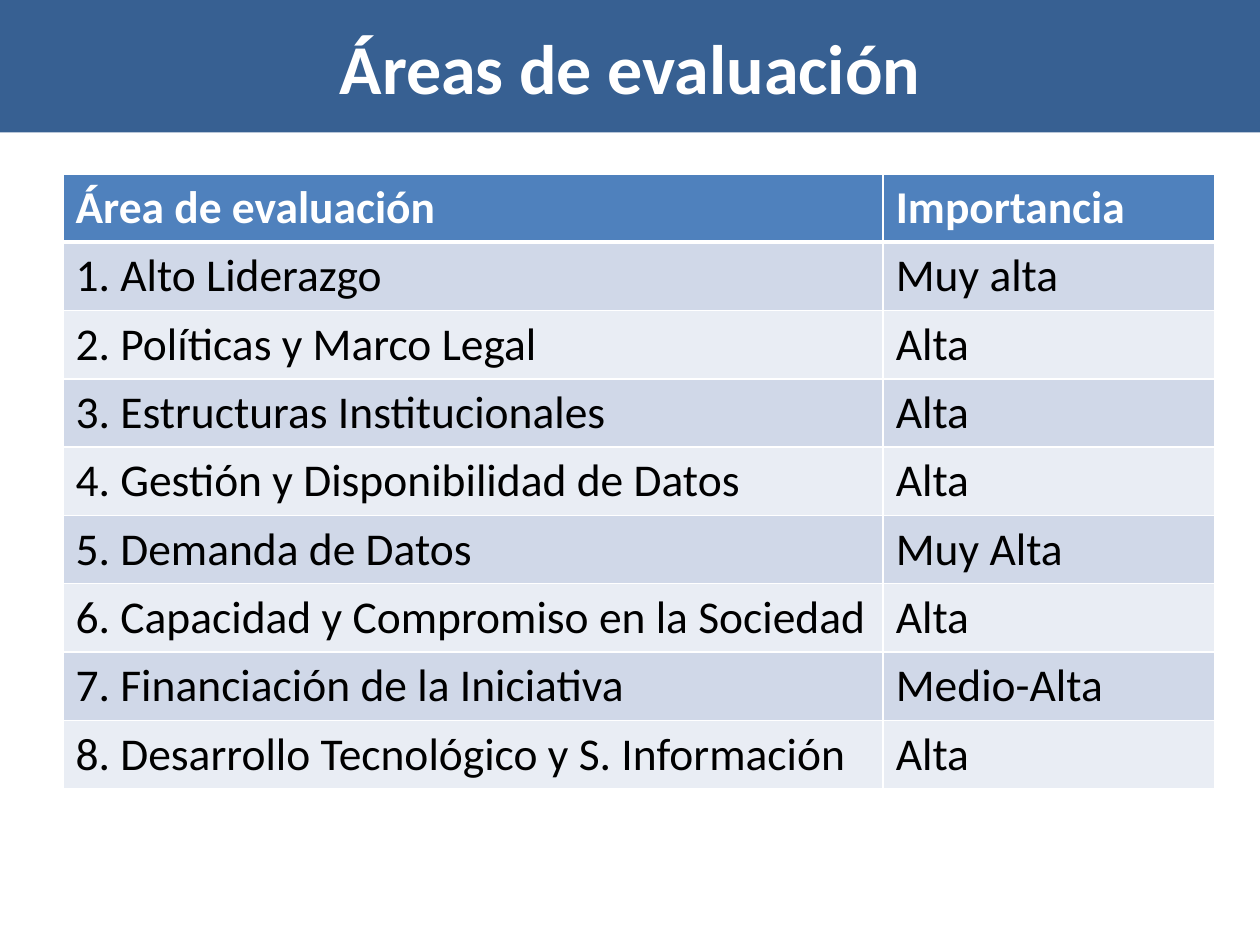
from dataclasses import dataclass
from typing import Any

from lxml.etree import SubElement
from pptx import Presentation
from pptx.dml.color import RGBColor
from pptx.enum.shapes import MSO_SHAPE as Shape
from pptx.enum.text import MSO_ANCHOR as Anchor, PP_ALIGN as Align
from pptx.oxml.ns import qn
from pptx.util import Inches, Pt

WHITE = RGBColor(0xFF, 0xFF, 0xFF)
BLACK = RGBColor(0x00, 0x00, 0x00)
TITLE_BLUE = RGBColor(0x37, 0x60, 0x92)
HEADER_BLUE = RGBColor(0x4F, 0x81, 0xBD)
BANDS = (RGBColor(0xD0, 0xD8, 0xE8), RGBColor(0xE9, 0xED, 0xF4))

HEADINGS = ("Área de evaluación", "Importancia")
AREAS = [
    ("Alto Liderazgo", "Muy alta"),
    ("Políticas y Marco Legal", "Alta"),
    ("Estructuras Institucionales", "Alta"),
    ("Gestión y Disponibilidad de Datos", "Alta"),
    ("Demanda de Datos", "Muy Alta"),
    ("Capacidad y Compromiso en la Sociedad", "Alta"),
    ("Financiación de la Iniciativa", "Medio-Alta"),
    ("Desarrollo Tecnológico y S. Información", "Alta"),
]


def write_text(frame, text, *, font, size, color, bold=False, align=Align.LEFT):
    paragraph = frame.paragraphs[0]
    paragraph.alignment = align
    run = paragraph.add_run()
    run.text = text
    run.font.name = font
    run.font.size = Pt(size)
    run.font.bold = bold
    run.font.color.rgb = color


def set_border(cell, side, color, width):
    line = SubElement(cell._tc.get_or_add_tcPr(), qn(f"a:ln{side}"), w=str(Pt(width)))
    fill = SubElement(line, qn("a:solidFill"))
    SubElement(fill, qn("a:srgbClr"), val=str(color))


@dataclass
class SlideBuilder:
    slide: Any
    width: int
    height: int
    font: str = "Calibri"
    title_size: int = 40
    table_size: int = 26

    def box(self, left, top, width, height):
        """Turn shares of the slide's size into lengths."""
        return (round(left * self.width), round(top * self.height),
                round(width * self.width), round(height * self.height))

    def title_band(self, text, *place):
        shape = self.slide.shapes.add_shape(Shape.RECTANGLE, *self.box(*place))
        shape.shadow.inherit = False
        shape.fill.solid()
        shape.fill.fore_color.rgb = TITLE_BLUE
        shape.line.fill.background()
        shape.text_frame.word_wrap = True
        shape.text_frame.vertical_anchor = Anchor.MIDDLE
        write_text(shape.text_frame, text, font=self.font, size=self.title_size,
                   color=WHITE, bold=True, align=Align.CENTER)

    def table(self, rows, column_shares, *place):
        frame = self.slide.shapes.add_table(
            len(rows), len(column_shares), *self.box(*place))
        table = frame.table
        for column, share in zip(table.columns, column_shares):
            column.width = round(share * self.width)
        for row_number, row in enumerate(rows):
            for column_number, text in enumerate(row):
                self.cell(table.cell(row_number, column_number), text, row_number)

    def cell(self, cell, text, row_number):
        header = row_number == 0
        # A thick white rule separates the header from the body
        widths = {"L": 1, "R": 1, "T": 3 if row_number == 1 else 1,
                  "B": 3 if header else 1}
        for side, width in widths.items():
            set_border(cell, side, WHITE, width)
        cell.fill.solid()
        cell.fill.fore_color.rgb = HEADER_BLUE if header else BANDS[(row_number - 1) % 2]
        write_text(cell.text_frame, text, font=self.font, size=self.table_size,
                   color=WHITE if header else BLACK, bold=header)


def main():
    presentation = Presentation()
    presentation.slide_width = Inches(10)
    presentation.slide_height = Inches(7.5)
    slide = presentation.slides.add_slide(presentation.slide_layouts[6])
    builder = SlideBuilder(slide, presentation.slide_width, presentation.slide_height)

    # Title across the top
    builder.title_band("Áreas de evaluación", 0, 0, 1, 0.14)

    # Numbered areas and their importance
    rows = [HEADINGS]
    rows += [(f"{number}. {area}", importance)
             for number, (area, importance) in enumerate(AREAS, start=1)]
    builder.table(rows, (0.651, 0.263), 0.05, 0.184, 0.914, 0.64)

    presentation.save("out.pptx")


if __name__ == "__main__":
    main()
